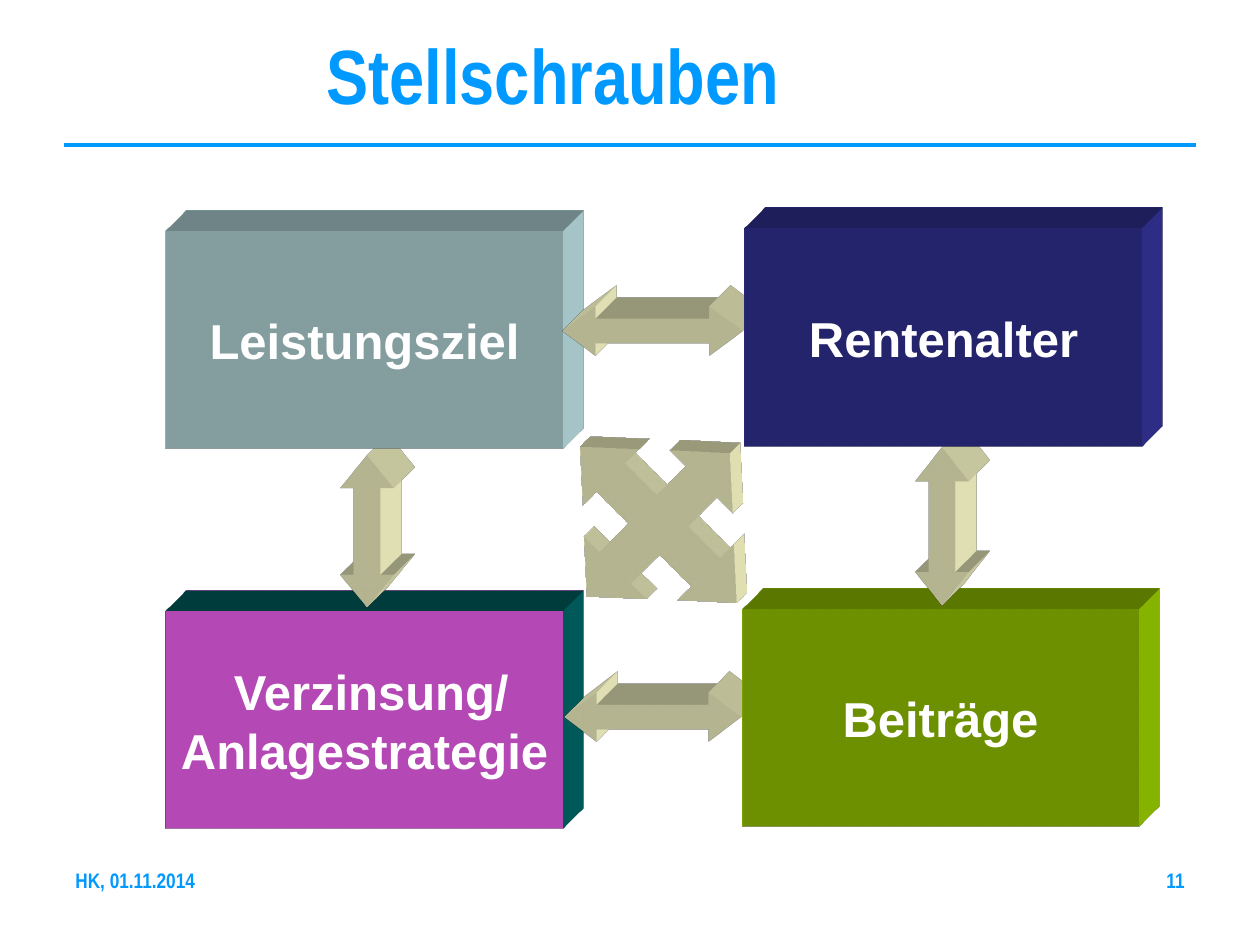
from dataclasses import dataclass
from lxml import etree
from pptx import Presentation
from pptx.dml.color import RGBColor
from pptx.enum.shapes import MSO_CONNECTOR as Connector, MSO_SHAPE as Shape
from pptx.enum.text import MSO_ANCHOR as Anchor, MSO_AUTO_SIZE as AutoSize, PP_ALIGN as Align
from pptx.oxml import parse_xml
from pptx.oxml.ns import nsdecls, qn
from pptx.util import Pt

PX = 914400 / 126


@dataclass(frozen=True)
class Theme:
    accent: str = "0099FF"
    white: str = "FFFFFF"
    arrow: str = "FFFFCC"
    heading_font: str = "Arial Narrow"
    body_font: str = "Arial"
    title_size: int = 44
    label_size: int = 28
    footer_size: int = 12
    rule_width: int = 2
    depth: int = 430200
    cross_depth: int = 215100


THEME = Theme()

# Content: lines, left, top, front colour, side colour
BOX_SIZE = (397, 218)
BOXES = {
    "interest": ([" Verzinsung/", "Anlagestrategie"], 166, 611, "FF66FF", "006666"),
    "contributions": (["Beiträge"], 742, 609, "99CC00", "99CC00"),
    "benefit": (["Leistungsziel"], 166, 231, "BBE0E3", "BBE0E3"),
    "age": (["Rentenalter"], 745, 229, "333399", "333399"),
}
# Arrows: left, top, width, height, rotation, head length
ARROWS = {
    "bottom": (565, 693, 176, 49, 0, 0.66),
    "left": (291, 505, 152, 53, 90, 0.62),
    "right": (863, 500, 158, 53, 90, 0.64),
    "top": (563, 307, 180, 49, 0, 0.68),
}
CROSS_CENTRE, CROSS_HALF = (658, 525), (111, 101)
CROSS_ARM = [(0, -1), (0.4, -0.6), (0.2, -0.6), (0.2, -0.2), (0.6, -0.2), (0.6, -0.4)]
FOOTERS = [("HK, 01.11.2014", 63, Align.LEFT), ("11", 903, Align.RIGHT)]


def emu(*lengths):
    return [round(length * PX) for length in lengths]


def rgb(colour):
    return RGBColor.from_string(colour)


def write(shape, lines, *, size, font, colour, align=Align.LEFT, anchor=Anchor.TOP, wrap=False):
    frame = shape.text_frame
    frame.word_wrap = wrap
    frame.auto_size = AutoSize.NONE
    frame.vertical_anchor = anchor
    for index, line in enumerate(lines):
        paragraph = frame.add_paragraph() if index else frame.paragraphs[0]
        paragraph.alignment = align
        run = paragraph.add_run()
        run.text = line
        run.font.size, run.font.name, run.font.bold = Pt(size), font, True
        run.font.color.rgb = rgb(colour)


def extrude(shape, colour, side, depth):
    """Fill a shape and give it an oblique depth to the upper right."""
    shape.shadow.inherit = False
    shape.fill.solid()
    shape.fill.fore_color.rgb = rgb(colour)
    shape.line.fill.background()
    properties = shape._element.spPr
    properties.append(parse_xml(
        f'<a:scene3d {nsdecls("a")}><a:camera prst="legacyObliqueTopRight"/>'
        '<a:lightRig rig="legacyFlat3" dir="b"/></a:scene3d>'))
    properties.append(parse_xml(
        f'<a:sp3d {nsdecls("a")} extrusionH="{depth}" prstMaterial="legacyMatte">'
        '<a:bevelT w="13500" h="13500" prst="angle"/><a:bevelB w="13500" h="13500" prst="angle"/>'
        f'<a:extrusionClr><a:srgbClr val="{side}"/></a:extrusionClr></a:sp3d>'))


def add_box(slide, name):
    lines, left, top, colour, side = BOXES[name]
    box = slide.shapes.add_shape(Shape.RECTANGLE, *emu(left, top, *BOX_SIZE))
    extrude(box, colour, side, THEME.depth)
    write(box, lines, size=THEME.label_size, font=THEME.body_font, colour=THEME.white,
          align=Align.CENTER, anchor=Anchor.MIDDLE)


def add_arrow(slide, name):
    *bounds, rotation, head = ARROWS[name]
    arrow = slide.shapes.add_shape(Shape.LEFT_RIGHT_ARROW, *emu(*bounds))
    arrow.adjustments[0], arrow.adjustments[1] = 0.5, head
    arrow.rotation = rotation
    extrude(arrow, THEME.arrow, THEME.arrow, THEME.depth)


def add_cross(slide):
    # One arm, turned by a quarter four times
    points, arm = [], CROSS_ARM
    for _ in range(4):
        points += arm
        arm = [(-y, x) for x, y in arm]
    outline = [emu(*(c + h * v for c, h, v in zip(CROSS_CENTRE, CROSS_HALF, point)))
               for point in points]
    builder = slide.shapes.build_freeform(*outline[0])
    builder.add_line_segments(outline[1:], close=True)
    cross = builder.convert_to_shape()
    cross.rotation = 45
    extrude(cross, THEME.arrow, THEME.arrow, THEME.cross_depth)


def main():
    presentation = Presentation()
    presentation.slide_width, presentation.slide_height = emu(1260, 945)
    slide = presentation.slides.add_slide(presentation.slide_layouts[5])

    # Title and rule
    title = slide.shapes.title
    title.left, title.top, title.width, title.height = emu(314, 21, 483, 106)
    write(title, ["Stellschrauben"], size=THEME.title_size, font=THEME.heading_font,
          colour=THEME.accent)
    rule = slide.shapes.add_connector(Connector.STRAIGHT, *emu(64, 145, 1196, 145))
    rule.line.color.rgb, rule.line.width = rgb(THEME.accent), Pt(THEME.rule_width)
    etree.SubElement(rule._element.spPr, qn("a:effectLst"))

    # Boxes and arrows, from back to front
    add_box(slide, "interest")
    add_arrow(slide, "bottom")
    add_box(slide, "contributions")
    add_arrow(slide, "left")
    add_box(slide, "benefit")
    add_arrow(slide, "right")
    add_arrow(slide, "top")
    add_cross(slide)
    add_box(slide, "age")

    # Footer
    for text, left, align in FOOTERS:
        box = slide.shapes.add_textbox(*emu(left, 861, 294, 65))
        write(box, [text], size=THEME.footer_size, font=THEME.heading_font,
              colour=THEME.accent, align=align, wrap=True)

    presentation.save("out.pptx")


if __name__ == "__main__":
    main()
